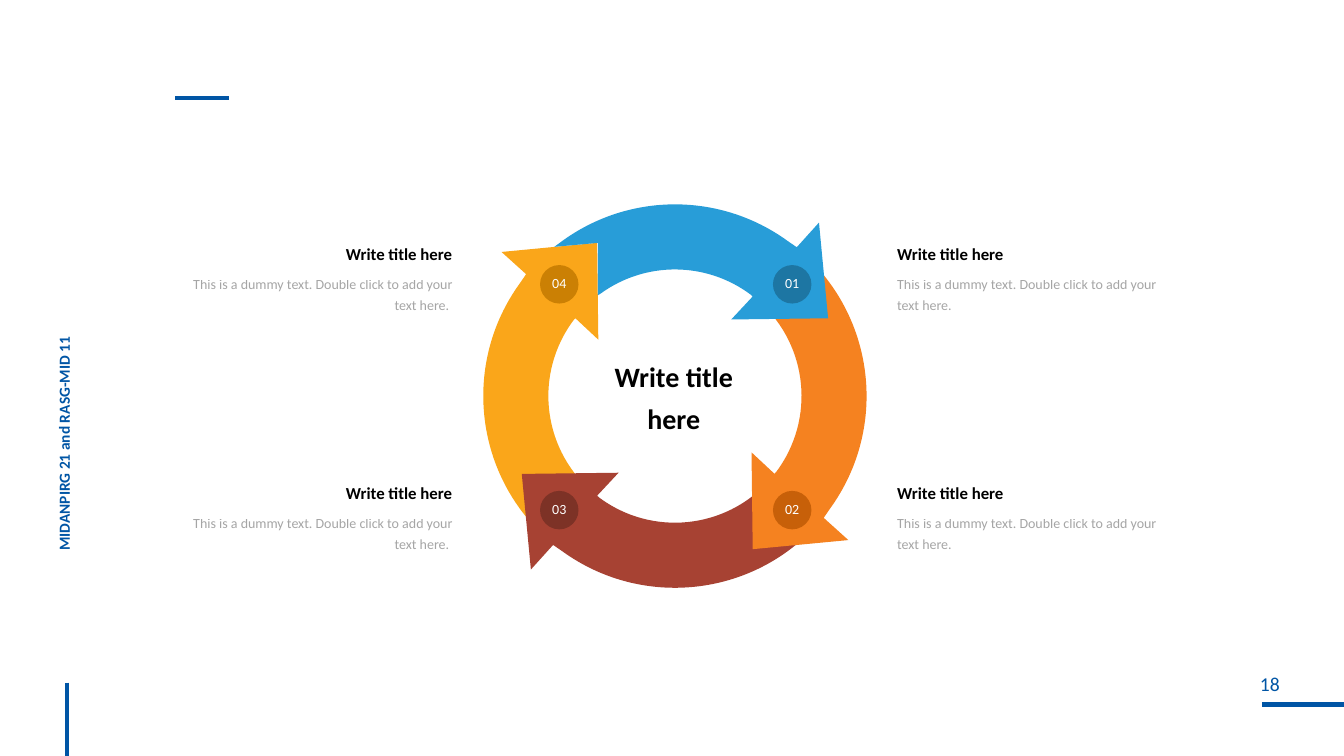
import math
from dataclasses import dataclass

import pptx
import pptx.dml.color
import pptx.enum.shapes
import pptx.enum.text
import pptx.oxml
import pptx.oxml.ns
import pptx.util

Cm = pptx.util.Cm
Pt = pptx.util.Pt
Align = pptx.enum.text.PP_ALIGN
Anchor = pptx.enum.text.MSO_ANCHOR
Kind = pptx.enum.shapes.MSO_SHAPE
Spot = tuple[float, float]


@dataclass(frozen=True)
class Theme:
    font: str = "Calibri"
    navy: str = "0055A5"
    black: str = "000000"
    gray: str = "808080"
    white: str = "FFFFFF"
    big: int = 20
    page: int = 14
    head: int = 12
    side: int = 11
    small: int = 10
    rule: int = 3


@dataclass(frozen=True)
class Step:
    label: str
    turn: int  # quarter turns clockwise
    fill: str
    dark: str
    right: bool
    low: bool
    cut: bool = False  # tail trimmed around the head of the step before


@dataclass(frozen=True)
class Rule:
    x1: float
    y1: float
    x2: float
    y2: float


THEME = Theme()
WIDE, HIGH = 33.87, 19.05
MID_X, MID_Y = 17.01, 9.98
OUTER, INNER, TILT = 4.83, 3.19, 48
HEAD = [(3.75, 3.07), (4.37, 3.63), (1.96, 3.86), (1.93, 1.42), (2.51, 1.96)]
TAIL = [(2.54, -1.94), (3.86, -1.94), (3.76, -3.04)]
BENDS = (1, 10)  # first control point of the outer and the inner arc
DOT = 0.97

STEPS = [
    Step("04", 2, "FAA61A", "CB8004", False, False),
    Step("03", 1, "A74233", "7D3226", False, True),
    Step("02", 0, "F58220", "C76009", True, True),
    Step("01", 3, "289DD8", "1D76A3", True, False, cut=True),
]
RULES = [
    Rule(31.8, 17.75, WIDE, 17.75),
    Rule(1.68, 17.2, 1.68, HIGH),
    Rule(4.42, 2.46, 5.77, 2.46),
]


def tint(code: str) -> pptx.dml.color.RGBColor:
    return pptx.dml.color.RGBColor.from_string(code)


def node(tag: str, extra: str = ""):
    return pptx.oxml.parse_xml(f"<a:{tag} {pptx.oxml.ns.nsdecls('a')} {extra}/>")


def write(par, text: str, *, size: int, color: str, bold: bool = False,
          align=Align.LEFT, line: float = 1.0, before: float = 0,
          alpha: int = 100) -> None:
    par.alignment = align
    par.line_spacing = line
    par.space_before = Pt(before)
    run = par.add_run()
    run.text = text
    run.font.name = THEME.font
    run.font.size = Pt(size)
    run.font.bold = bold
    run.font.color.rgb = tint(color)
    if alpha < 100:
        shade = run._r.find(".//" + pptx.oxml.ns.qn("a:srgbClr"))
        shade.append(node("alpha", f'val="{alpha * 1000}"'))


def frame(shape, *, wrap: bool = True, side: float = 0.25, edge: float = 0.13,
          anchor=Anchor.TOP):
    """Set margins and wrapping, and return the text frame."""
    text = shape.text_frame
    text.word_wrap = wrap
    text.auto_size = pptx.enum.text.MSO_AUTO_SIZE.NONE
    text.margin_left = text.margin_right = Cm(side)
    text.margin_top = text.margin_bottom = Cm(edge)
    text.vertical_anchor = anchor
    return text


def paint(shape, fill: str) -> None:
    shape.shadow.inherit = False
    shape.fill.solid()
    shape.fill.fore_color.rgb = tint(fill)
    shape.line.fill.background()


def spin(x: float, y: float, angle: float) -> Spot:
    cos, sin = math.cos(math.radians(angle)), math.sin(math.radians(angle))
    return x * cos - y * sin, x * sin + y * cos


def arc(radius: float, start: float, end: float) -> list[Spot]:
    """Give the four points of a Bezier curve along a circle."""
    pull = radius * 4 / 3 * math.tan(math.radians(end - start) / 4)
    return [spin(radius, 0, start), spin(radius, pull, start),
            spin(radius, -pull, end), spin(radius, 0, end)]


def bend(shape) -> None:
    """Turn the lines through control points into curves."""
    lane = shape._element.find(".//" + pptx.oxml.ns.qn("a:path"))
    marks = list(lane)
    for first in BENDS:
        curve = node("cubicBezTo")
        marks[first].addprevious(curve)
        for mark in marks[first:first + 3]:
            curve.append(mark[0])
            lane.remove(mark)


def draw_arrow(shapes, step: Step):
    start = -36 if step.cut else -48
    points = arc(OUTER, start, 36) + HEAD + arc(INNER, 36.7, start)
    if step.cut:
        points += TAIL
    spots = [spin(x, y, 90 * step.turn + TILT) for x, y in points]
    spots = [(Cm(MID_X + x), Cm(MID_Y + y)) for x, y in spots]
    pen = shapes.build_freeform(*spots[0])
    pen.add_line_segments(spots[1:], close=True)
    shape = pen.convert_to_shape()
    bend(shape)
    paint(shape, step.fill)
    half_x, half_y = shape.width / 2, shape.height / 2
    x, y = spin(shape.left + half_x - Cm(MID_X),
                shape.top + half_y - Cm(MID_Y), -TILT)
    shape.left = round(Cm(MID_X) + x - half_x)
    shape.top = round(Cm(MID_Y) + y - half_y)
    shape.rotation = 360 - TILT
    return shape


def draw_dot(shapes, step: Step) -> None:
    x = 19.48 if step.right else 13.61
    y = 12.37 if step.low else 6.68
    dot = shapes.add_shape(Kind.OVAL, Cm(x), Cm(y), Cm(DOT), Cm(DOT))
    paint(dot, step.dark)
    text = frame(dot, side=0, edge=0, anchor=Anchor.MIDDLE)
    write(text.paragraphs[0], step.label, size=THEME.small, color=THEME.white,
          align=Align.CENTER, line=0.8)


def draw_note(shapes, step: Step) -> None:
    x = 22.61 if step.right else 4.8
    y = 11.94 if step.low else 5.92
    align = Align.LEFT if step.right else Align.RIGHT
    body = "This is a dummy text. Double click to add your text here."
    text = frame(shapes.add_textbox(Cm(x), Cm(y), Cm(6.6), Cm(2.11)), side=0)
    write(text.paragraphs[0], "Write title here", size=THEME.head,
          color=THEME.black, bold=True, align=align, line=1.2)
    write(text.add_paragraph(), body if step.right else body + " ",
          size=THEME.small, color=THEME.gray, align=align, line=1.2,
          before=6, alpha=70)


def draw_rule(shapes, rule: Rule) -> None:
    line = shapes.add_connector(
        pptx.enum.shapes.MSO_CONNECTOR.STRAIGHT,
        Cm(rule.x1), Cm(rule.y1), Cm(rule.x2), Cm(rule.y2))
    line.line.color.rgb = tint(THEME.navy)
    line.line.width = Pt(THEME.rule)
    line._element.spPr.append(node("effectLst"))


def draw_title(title) -> None:
    title.left, title.top = Cm(15.06), Cm(8.94)
    title.width, title.height = Cm(3.84), Cm(2.18)
    text = frame(title, wrap=False)
    look = dict(size=THEME.big, color=THEME.black, bold=True, align=Align.CENTER)
    write(text.paragraphs[0], "Write title", **look)
    write(text.add_paragraph(), "here", before=6, **look)


def draw_edge(shapes) -> None:
    """Draw the page number and the upright label."""
    page = shapes.add_textbox(Cm(30.48), Cm(16.92), Cm(3.05), Cm(0.84))
    text = frame(page, wrap=False, side=0, edge=0)
    write(text.paragraphs[0], "18", size=THEME.page, color=THEME.navy,
          align=Align.CENTER)
    label = shapes.add_textbox(Cm(-4.83), Cm(7.19), Cm(13.06), Cm(0.81))
    label.rotation = 270
    write(frame(label).paragraphs[0], "MIDANPIRG 21 and RASG-MID 11",
          size=THEME.side, color=THEME.navy, bold=True, line=0.9)


def main() -> None:
    deck = pptx.Presentation()
    deck.slide_width, deck.slide_height = Cm(WIDE), Cm(HIGH)
    shapes = deck.slides.add_slide(deck.slide_layouts[5]).shapes
    for rule in RULES:
        draw_rule(shapes, rule)
    draw_edge(shapes)
    shapes.add_group_shape([draw_arrow(shapes, step) for step in STEPS])
    for step in STEPS:
        draw_dot(shapes, step)
        draw_note(shapes, step)
    draw_title(shapes.title)
    deck.save("out.pptx")


if __name__ == "__main__":
    main()
